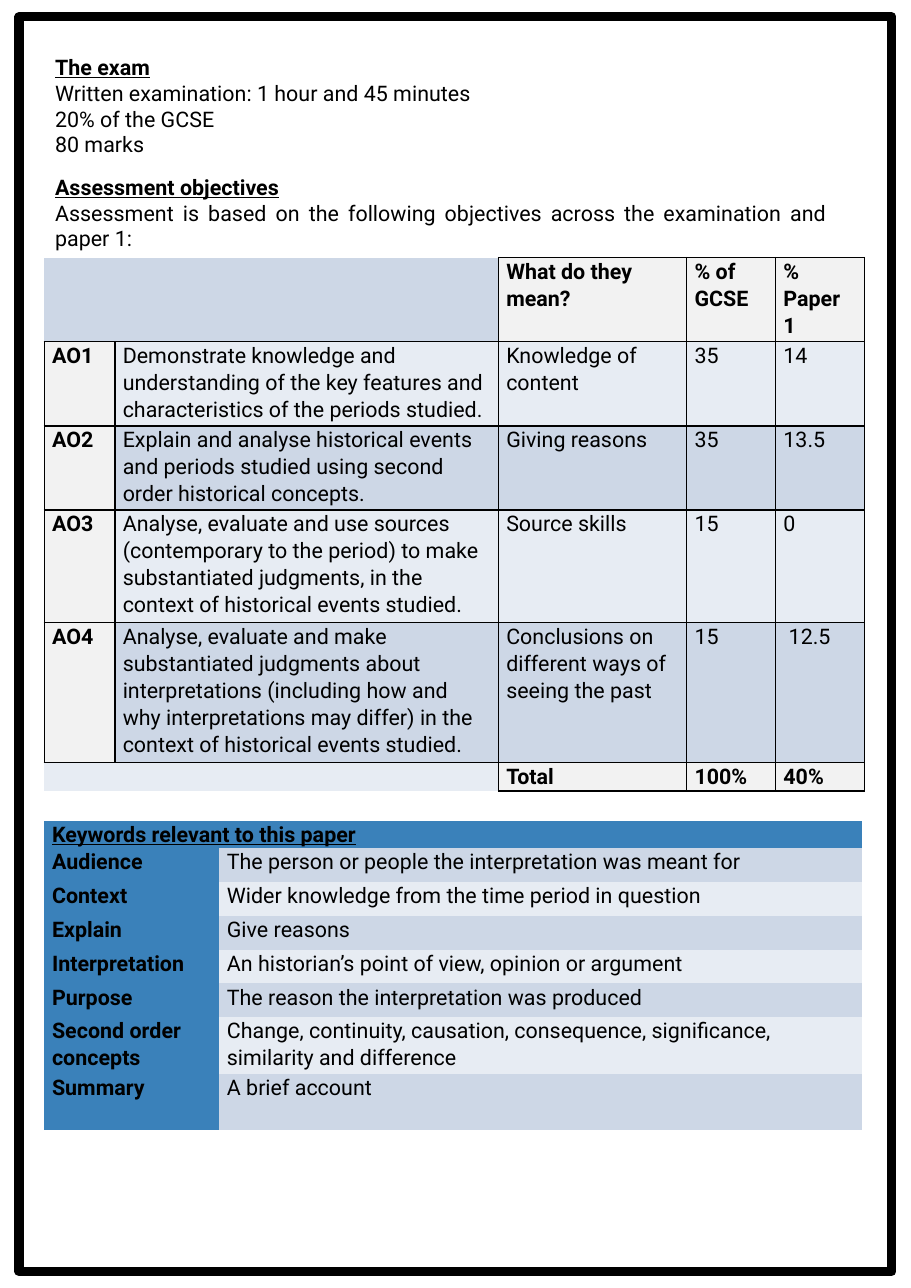
from lxml import etree
from pptx import Presentation
from pptx.dml.color import RGBColor
from pptx.enum.shapes import MSO_SHAPE
from pptx.enum.text import PP_ALIGN
from pptx.oxml import parse_xml
from pptx.oxml.ns import nsdecls, qn
from pptx.util import Cm, Pt

BLACK, WHITE, GREY = "000000", "FFFFFF", "F2F2F2"
DARK_BAND, LIGHT_BAND, BLUE = "CDD7E6", "E7ECF3", "3A81BA"
PLAIN_TABLE = "{2D5ABB26-0587-4C30-8999-92F81FD0307C}"


def color(value):
    return RGBColor.from_string(value)


def write(paragraph, text, bold=False, underline=False):
    paragraph.text = text
    font = paragraph.font
    font.name, font.size = "Roboto", Pt(14)
    font.bold, font.underline = bold, underline
    font.color.rgb = color(BLACK)


presentation = Presentation()
presentation.slide_width, presentation.slide_height = Cm(21), Cm(29.7)
slide = presentation.slides.add_slide(presentation.slide_layouts[6])

frame = slide.shapes.add_shape(MSO_SHAPE.RECTANGLE, Cm(0.44), Cm(0.39), Cm(20.12), Cm(28.93))
frame.shadow.inherit = False
frame.fill.solid()
frame.fill.fore_color.rgb = color(WHITE)
frame.line.color.rgb = color(BLACK)
frame.line.width = Pt(6)
etree.SubElement(frame.line._ln, qn("a:round"))

sections = [
    (1, 19.35, 5.44, 0.25, PP_ALIGN.LEFT,
     ["The exam", "Written examination: 1 hour and 45 minutes", "20% of the GCSE", "80 marks"]),
    (3.88, 18.29, 2.06, 0.13, PP_ALIGN.JUSTIFY,
     ["Assessment objectives",
      "Assessment is based on the following objectives across the examination and paper 1:"]),
]
for top, width, height, inset, alignment, lines in sections:
    text_frame = slide.shapes.add_textbox(Cm(1.02), Cm(top), Cm(width), Cm(height)).text_frame
    text_frame.word_wrap = True
    text_frame.margin_left = text_frame.margin_right = Cm(0.25)
    text_frame.margin_top = text_frame.margin_bottom = Cm(inset)
    for index, line in enumerate(lines):
        paragraph = text_frame.add_paragraph() if index else text_frame.paragraphs[0]
        paragraph.alignment = alignment
        write(paragraph, line, bold=index == 0, underline=index == 0)

objectives = [
    ["", "", "What do they mean?", "% of GCSE", "% Paper 1"],
    ["AO1", "Demonstrate knowledge and understanding of the key features and "
     "characteristics of the periods studied.", "Knowledge of content", "35", "14"],
    ["AO2", "Explain and analyse historical events and periods studied using second "
     "order historical concepts.", "Giving reasons", "35", "13.5"],
    ["AO3", "Analyse, evaluate and use sources (contemporary to the period) to make "
     "substantiated judgments, in the context of historical events studied.",
     "Source skills", "15", "0"],
    ["AO4", "Analyse, evaluate and make substantiated judgments about interpretations "
     "(including how and why interpretations may differ) in the context of historical "
     "events studied.", "Conclusions on different ways of seeing the past", "15", " 12.5"],
    ["", "", "Total", "100%", "40%"],
]
keywords = [
    ["Keywords relevant to this paper", ""],
    ["Audience", "The person or people the interpretation was meant for"],
    ["Context", "Wider knowledge from the time period in question"],
    ["Explain", "Give reasons"],
    ["Interpretation", "An historian’s point of view, opinion or argument"],
    ["Purpose", "The reason the interpretation was produced"],
    ["Second order concepts", "Change, continuity, causation, consequence, significance, "
     "similarity and difference"],
    ["Summary", "A brief account"],
]
objective_merges = [(row, 1, 5) for row in range(5)] + [(5, 0, 1)]
tables = [
    (objectives, 5.94, [1.63, 0.76, 2.54, 2.54, 2.54, 0.44, 4.34, 2.05, 2.05],
     [1.94, 1.94, 1.94, 2.6, 3.23, 0.65], [0, 1, 6, 7, 8], objective_merges,
     GREY, [0, 5], True),
    (keywords, 18.92, [4.03, 14.82], [0.63] + [0.78] * 5 + [1.3] * 2,
     [0, 1], [(0, 0, 1)], BLUE, [0], False),
]
for (rows, top, widths, heights, text_columns, merges,
     label_fill, label_rows, bordered) in tables:
    graphic_frame = slide.shapes.add_table(
        len(rows), len(widths), Cm(1.02), Cm(top), Cm(sum(widths)), Cm(sum(heights)))
    table = graphic_frame.table
    table.first_row = table.horz_banding = False
    table._tbl.tblPr.find(qn("a:tableStyleId")).text = PLAIN_TABLE
    for column, width in zip(table.columns, widths):
        column.width = Cm(width)
    for row, height in zip(table.rows, heights):
        row.height = Cm(height)
    for row, first, last in merges:
        table.cell(row, first).merge(table.cell(row, last))

    for row, texts in enumerate(rows):
        row_texts = dict(zip(text_columns, texts))
        band = LIGHT_BAND if row % 2 == bordered else DARK_BAND
        for column in range(len(widths)):
            cell = table.cell(row, column)
            corner = bordered and row in label_rows and column < 6
            label = not corner and (column == 0 or row in label_rows)
            cell.margin_left = cell.margin_right = Cm(0.18)
            cell.margin_top = cell.margin_bottom = 0
            sides = "LRTB" if bordered and not cell.is_spanned else ""
            if corner:
                meets_labels = column == 5 or cell.is_merge_origin and row == 0
                sides = ("R" if meets_labels else "") + ("B" if row == 0 else "T")
                band = DARK_BAND if row == 0 else LIGHT_BAND
            for side in sides:
                cell._tc.get_or_add_tcPr().append(parse_xml(
                    f'<a:ln{side} {nsdecls("a")} w="12700"><a:solidFill>'
                    f'<a:srgbClr val="{BLACK}"/></a:solidFill></a:ln{side}>'))
            cell.fill.solid()
            cell.fill.fore_color.rgb = color(label_fill if label else band)
            paragraph = cell.text_frame.paragraphs[0]
            paragraph.line_spacing = 1.07
            write(paragraph, row_texts.get(column, ""), bold=label,
                  underline=label and not bordered and row == 0)

presentation.save("out.pptx")
